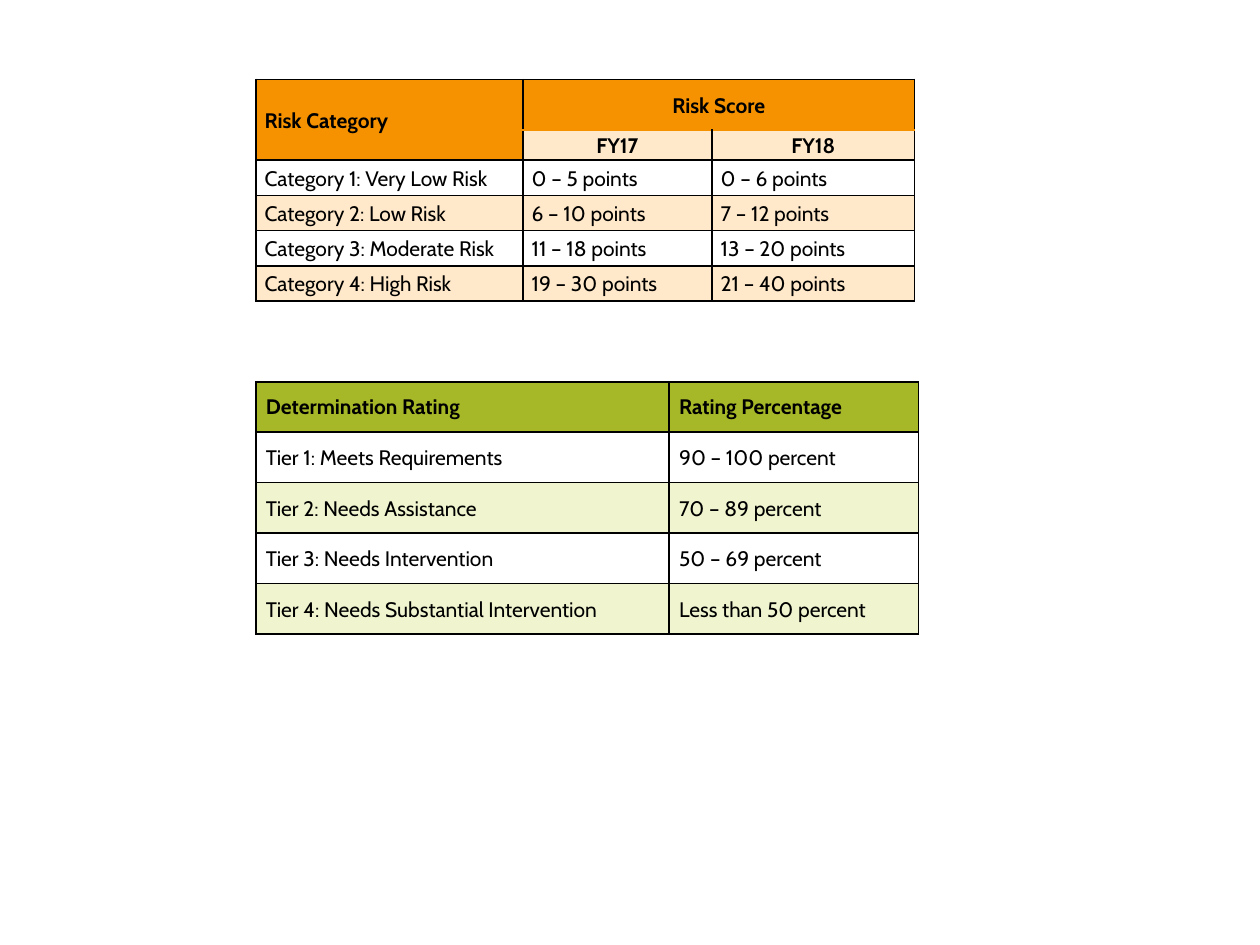
from lxml.etree import SubElement
from pptx import Presentation
from pptx.dml.color import RGBColor
from pptx.enum.text import MSO_ANCHOR, PP_ALIGN
from pptx.oxml.ns import qn
from pptx.util import Inches, Pt

BLACK = RGBColor(0x00, 0x00, 0x00)
ORANGE = RGBColor(0xF6, 0x92, 0x00)
PEACH = RGBColor(0xFF, 0xE9, 0xCA)
GREEN = RGBColor(0xA6, 0xB7, 0x27)
PALE_GREEN = RGBColor(0xF0, 0xF5, 0xCF)

RISK_ROWS = [
    ("Risk Category", "Risk Score", ""),
    ("", "FY17", "FY18"),
    ("Category 1: Very Low Risk", "0 – 5 points", "0 – 6 points"),
    ("Category 2: Low Risk", "6 – 10 points", "7 – 12 points"),
    ("Category 3: Moderate Risk", "11 – 18 points", "13 – 20 points"),
    ("Category 4: High Risk", "19 – 30 points", "21 – 40 points"),
]
RATING_ROWS = [
    ("Determination Rating", "Rating Percentage"),
    ("Tier 1: Meets Requirements", "90 – 100 percent"),
    ("Tier 2: Needs Assistance", "70 – 89 percent"),
    ("Tier 3: Needs Intervention", "50 – 69 percent"),
    ("Tier 4: Needs Substantial Intervention", "Less than 50 percent"),
]
LEFT = 2.03


def set_borders(cell, top=BLACK, bottom=BLACK):
    """Draw 1 pt lines on all four sides; call before filling the cell."""
    tc_pr = cell._tc.get_or_add_tcPr()
    for side, color in (("L", BLACK), ("R", BLACK), ("T", top), ("B", bottom)):
        ln = SubElement(tc_pr, qn(f"a:ln{side}"), w=str(Pt(1)))
        SubElement(SubElement(ln, qn("a:solidFill")), qn("a:srgbClr"), val=str(color))


def write(cell, text, bold=False, align=PP_ALIGN.LEFT, spacing=1.07, inset=0.07):
    cell.vertical_anchor = MSO_ANCHOR.MIDDLE
    cell.margin_left = cell.margin_right = Inches(inset)
    cell.margin_top = cell.margin_bottom = 0
    p = cell.text_frame.paragraphs[0]
    p.alignment, p.line_spacing = align, spacing
    p.font.size, p.font.name = Pt(12), "Cabin"
    if text:
        r = p.add_run()
        r.text = text
        f = r.font
        f.size, f.name, f.bold = Pt(12), "Cabin", bold
        f.color.rgb = BLACK


def add_grid(s, top, rows, widths, heights, style):
    """Add a table; style(row, col) gives (fill, border colours, text format)."""
    table = s.shapes.add_table(len(rows), len(widths), Inches(LEFT), Inches(top),
                               Inches(sum(widths)), Inches(sum(heights))).table
    for column, width in zip(table.columns, widths):
        column.width = Inches(width)
    for row, height in zip(table.rows, heights):
        row.height = Inches(height)
    for i, texts in enumerate(rows):
        for j, text in enumerate(texts):
            cell = table.cell(i, j)
            fill, borders, text_format = style(i, j)
            set_borders(cell, **borders)
            if fill is None:
                cell.fill.background()
            else:
                cell.fill.solid()
                cell.fill.fore_color.rgb = fill
            write(cell, text, **text_format)
    return table


def risk_style(i, j):
    if i > 1:
        return (PEACH if i % 2 else None), {}, {}
    if j == 0:
        return ORANGE, {}, {"bold": True}
    fill, seam = (ORANGE, "bottom") if i == 0 else (PEACH, "top")
    return fill, {seam: ORANGE}, {"bold": True, "align": PP_ALIGN.CENTER}


def rating_style(i, j):
    if i == 0:
        return GREEN, {}, {"bold": True, "spacing": 1.0, "inset": 0.08}
    return (None if i % 2 else PALE_GREEN), {}, {"inset": 0.08}


prs = Presentation()
prs.slide_width, prs.slide_height = Inches(10), Inches(7.5)
s = prs.slides.add_slide(prs.slide_layouts[6])

risk = add_grid(s, 0.63, RISK_ROWS, [2.12, 1.5, 1.61], [0.4, 0.24] + [0.28] * 4, risk_style)
risk.cell(0, 0).merge(risk.cell(1, 0))
risk.cell(0, 1).merge(risk.cell(0, 2))
add_grid(s, 3.03, RATING_ROWS, [3.28, 1.98], [0.4] * 5, rating_style)

prs.save("out.pptx")
